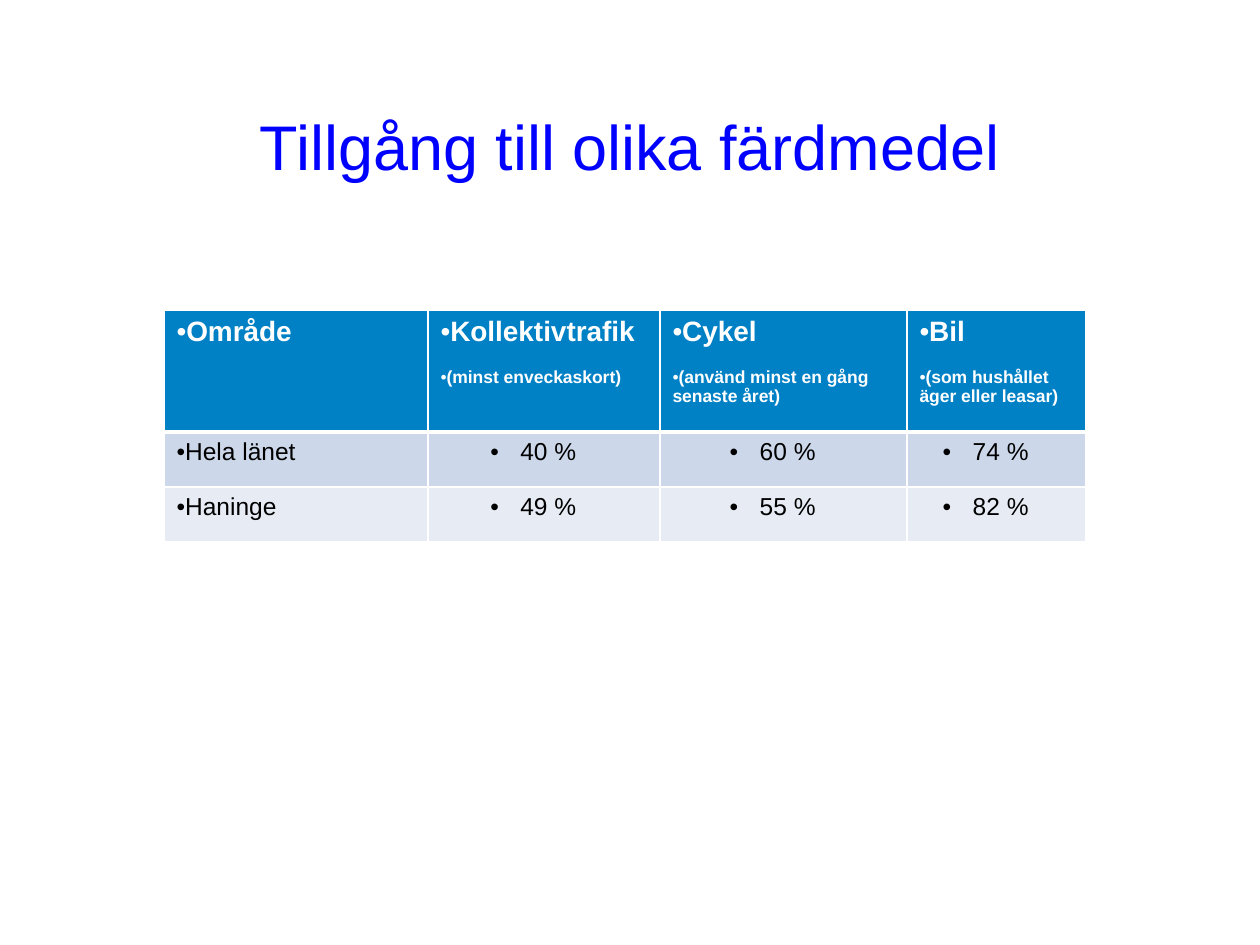
from dataclasses import dataclass

import pptx
import pptx.dml.color
import pptx.enum.text
import pptx.oxml
import pptx.oxml.ns
import pptx.util

SCALE = 914400 / 126
ALIGN = pptx.enum.text.PP_ALIGN
COLORS = {
    "title": "0000FF",
    "header": "0081C5",
    "band": "CCD8EA",
    "light": "E7EBF4",
    "white": "FFFFFF",
    "black": "000000",
}
COLUMN_WIDTHS = [264, 232, 247, 179]
ROW_HEIGHTS = [122, 55, 55]
SHARE_INDENT = 30
SHARE_MARGIN = 34


@dataclass
class Line:
    text: str
    size: int
    color: str
    bold: bool = False
    align: ALIGN = ALIGN.LEFT
    before: float = 0
    indent: int = 0


@dataclass
class Heading:
    name: str
    note: str = ""


@dataclass
class Area:
    name: str
    shares: list[int]
    fill: str


HEADINGS = [
    Heading("Område"),
    Heading("Kollektivtrafik", "(minst enveckaskort)"),
    Heading("Cykel", "(använd minst en gång senaste året)"),
    Heading("Bil", "(som hushållet äger eller leasar)"),
]
AREAS = [
    Area("Hela länet", [40, 60, 74], "band"),
    Area("Haninge", [49, 55, 82], "light"),
]


def px(length: int) -> int:
    return round(length * SCALE)


def rgb(name: str) -> pptx.dml.color.RGBColor:
    return pptx.dml.color.RGBColor.from_string(COLORS[name])


def apply(target, values: dict) -> None:
    for name, value in values.items():
        setattr(target, name, value)


def write_line(para, line: Line) -> None:
    para.alignment = line.align
    if line.before:
        para.space_before = pptx.util.Pt(line.before)
    span = para.add_run()
    span.text = line.text
    apply(span.font, {"name": "Arial", "size": pptx.util.Pt(line.size), "bold": line.bold})
    span.font.color.rgb = rgb(line.color)


def add_bullet(para, indent: int) -> None:
    properties = para._p.get_or_add_pPr()
    for name, length in {"marL": indent, "indent": -indent}.items():
        properties.set(name, str(px(length)))
    namespace = pptx.oxml.ns.nsdecls("a")
    properties.append(pptx.oxml.parse_xml(f'<a:buFont {namespace} typeface="Arial"/>'))
    properties.append(pptx.oxml.parse_xml(f'<a:buChar {namespace} char="•"/>'))


def add_borders(cell, top: int, bottom: int) -> None:
    properties = cell._tc.get_or_add_tcPr()
    for side, points in {"L": 1, "R": 1, "T": top, "B": bottom}.items():
        properties.append(pptx.oxml.parse_xml(
            f'<a:ln{side} {pptx.oxml.ns.nsdecls("a")} w="{pptx.util.Pt(points)}">'
            f'<a:solidFill><a:srgbClr val="{COLORS["white"]}"/></a:solidFill>'
            f'</a:ln{side}>'
        ))


def fill_cell(cell, lines: list[Line], fill: str, top: int = 1, bottom: int = 1) -> None:
    add_borders(cell, top, bottom)
    cell.fill.solid()
    cell.fill.fore_color.rgb = rgb(fill)
    for index, line in enumerate(lines):
        para = cell.text_frame.add_paragraph() if index else cell.text_frame.paragraphs[0]
        add_bullet(para, line.indent)
        write_line(para, line)


def add_title(page) -> None:
    title = page.shapes.title
    apply(title, {"left": px(63), "top": px(66), "width": px(1134), "height": px(158)})
    apply(title.text_frame, {
        "vertical_anchor": pptx.enum.text.MSO_ANCHOR.MIDDLE,
        "word_wrap": True,
        "auto_size": pptx.enum.text.MSO_AUTO_SIZE.NONE,
    })
    line = Line("Tillgång till olika färdmedel", 36, "title", align=ALIGN.CENTER)
    write_line(title.text_frame.paragraphs[0], line)


def add_access_table(page) -> None:
    table = page.shapes.add_table(
        len(ROW_HEIGHTS), len(COLUMN_WIDTHS), px(164), px(310),
        px(sum(COLUMN_WIDTHS)), px(sum(ROW_HEIGHTS)),
    ).table
    for column, width in zip(table.columns, COLUMN_WIDTHS):
        column.width = px(width)
    for row, height in zip(table.rows, ROW_HEIGHTS):
        row.height = px(height)
    for index, heading in enumerate(HEADINGS):
        lines = [Line(heading.name, 16, "white", True)]
        if heading.note:
            lines.append(Line(heading.note, 10, "white", True, before=11.5))
        fill_cell(table.cell(0, index), lines, "header", bottom=3)
    for row, area in enumerate(AREAS, 1):
        top = 3 if row == 1 else 1
        fill_cell(table.cell(row, 0), [Line(area.name, 14, "black")], area.fill, top=top)
        for column, share in enumerate(area.shares, 1):
            cell = table.cell(row, column)
            line = Line(f"{share} %", 14, "black", align=ALIGN.CENTER, indent=SHARE_INDENT)
            fill_cell(cell, [line], area.fill, top=top)
            cell.margin_right = px(SHARE_MARGIN)


def main() -> None:
    deck = pptx.Presentation()
    apply(deck, {"slide_width": px(1260), "slide_height": px(945)})
    page = deck.slides.add_slide(deck.slide_layouts[5])
    add_title(page)
    add_access_table(page)
    deck.save("out.pptx")


if __name__ == "__main__":
    main()
